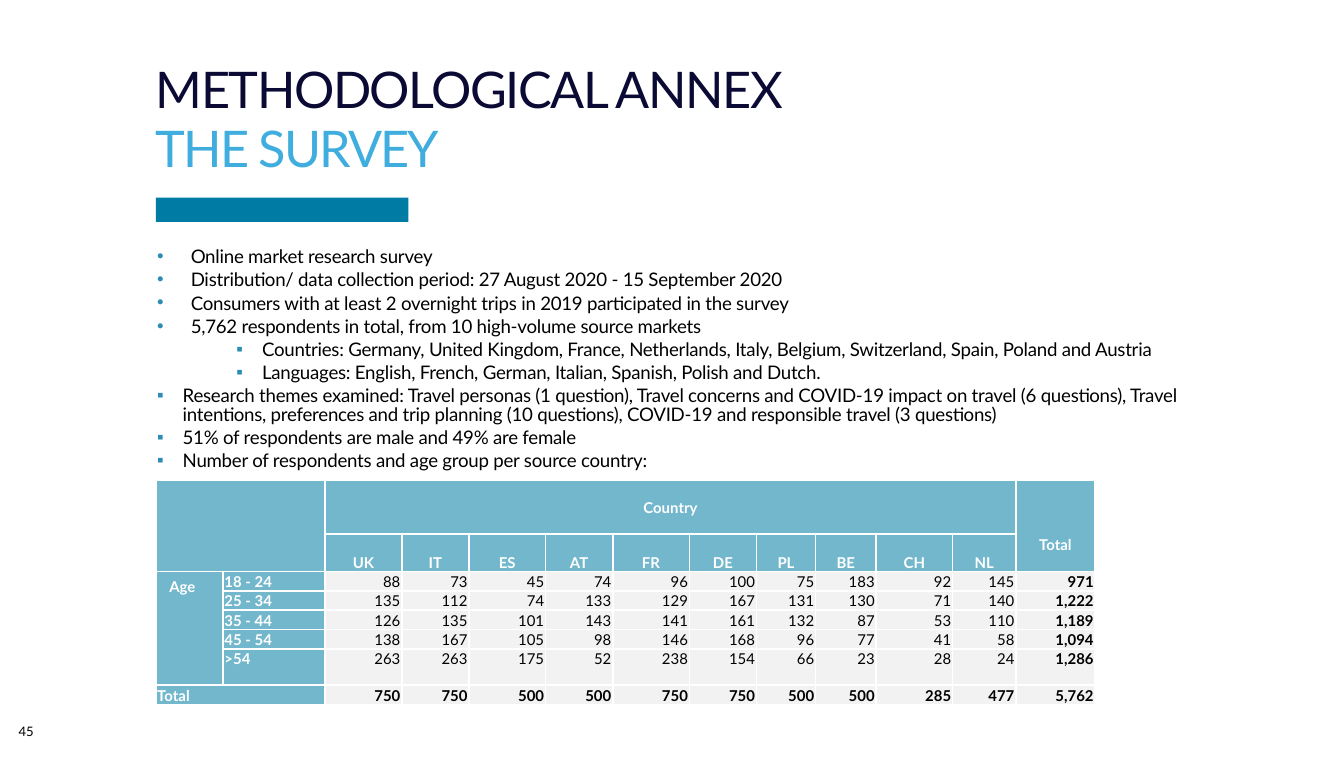
from pptx import Presentation
from pptx.util import Inches, Pt
from pptx.dml.color import RGBColor as RGB
from pptx.enum.shapes import MSO_SHAPE as Shape
from pptx.enum.text import MSO_ANCHOR as Anchor, MSO_AUTO_SIZE as Auto, PP_ALIGN as Align
from pptx.oxml.ns import qn
from lxml.etree import SubElement as Sub

HUE = {"navy": "0A0A35", "sky": "3FADDD", "bar": "007BA3", "dot": "2D8CB5",
       "head": "73B7CC", "pale": "F2F2F2", "white": "FFFFFF", "black": "000000"}
FACE = "Lato"

TITLE = [("METHODOLOGICAL ANNEX", "navy", -80, 1), ("THE SURVEY", "sky", -100, 0)]

ROUND = ("•", 0.26, -0.25, 0)
SUBSET = ("▪", 0.79, -0.19, 1)
SQUARE = ("▪", 0.2, -0.19, 0)
POINTS = [
    (ROUND, "Online market research survey"),
    (ROUND, "Distribution/ data collection period: 27 August 2020 - 15 September 2020"),
    (ROUND, "Consumers with at least 2 overnight trips in 2019 participated in the survey"),
    (ROUND, "5,762 respondents in total, from 10 high-volume source markets"),
    (SUBSET, "Countries: Germany, United Kingdom, France, Netherlands, Italy, Belgium, "
             "Switzerland, Spain, Poland and Austria"),
    (SUBSET, "Languages: English, French, German, Italian, Spanish, Polish and Dutch."),
    (SQUARE, "Research themes examined: Travel personas (1 question), Travel concerns and "
             "COVID-19 impact on travel (6 questions), Travel intentions, preferences and trip "
             "planning (10 questions), COVID-19 and responsible travel (3 questions)"),
    (SQUARE, "51% of respondents are male and 49% are female"),
    (SQUARE, "Number of respondents and age group per source country:"),
]

LANDS = ["UK", "IT", "ES", "AT", "FR", "DE", "PL", "BE", "CH", "NL"]
AGES = [
    ("18 - 24", [88, 73, 45, 74, 96, 100, 75, 183, 92, 145, 971]),
    ("25 - 34", [135, 112, 74, 133, 129, 167, 131, 130, 71, 140, 1222]),
    ("35 - 44", [126, 135, 101, 143, 141, 161, 132, 87, 53, 110, 1189]),
    ("45 - 54", [138, 167, 105, 98, 146, 168, 96, 77, 41, 58, 1094]),
    (">54", [263, 263, 175, 52, 238, 154, 66, 23, 28, 24, 1286]),
]
SUMS = [750, 750, 500, 500, 750, 750, 500, 500, 285, 477, 5762]

GRID = [
    ["", ""] + ["Country"] + [""] * 9 + ["Total"],
    ["", ""] + LANDS + [""],
    *[["" if i else "Age", age] + [f"{n:,}" for n in nums]
      for i, (age, nums) in enumerate(AGES)],
    ["Total", ""] + [f"{n:,}" for n in SUMS],
]
COLS = [0.5, 0.76, 0.57, 0.5, 0.57, 0.5, 0.57, 0.5, 0.44, 0.45, 0.57, 0.47, 0.59]
ROWS = [0.4, 0.28] + [0.14] * 4 + [0.27, 0.14]
SPANS = [(0, 0, 1, 1), (0, 2, 0, 11), (0, 12, 1, 12), (2, 0, 6, 0), (7, 0, 7, 1)]


def say(para, text, size=8, color="black", bold=False, align=Align.LEFT,
        line=None, before=0, track=0):
    para.alignment = align
    para.space_before = Pt(before)
    if line:
        para.line_spacing = Pt(line)
    if not text:
        Sub(para._p, qn("a:endParaRPr"), sz=str(size * 100))
        return
    run = para.add_run()
    run.text = text
    font = run.font
    font.name, font.size, font.bold = FACE, Pt(size), bold
    font.color.rgb = RGB.from_string(HUE[color])
    if track:
        run._r.get_or_add_rPr().set("spc", str(track))


def pad(obj, left, top, right, low):
    obj.margin_left, obj.margin_top = Inches(left), Inches(top)
    obj.margin_right, obj.margin_bottom = Inches(right), Inches(low)


def lines(frame, count):
    return [frame.paragraphs[0]] + [frame.add_paragraph() for _ in range(count - 1)]


def box(slide, x, y, w, h):
    frame = slide.shapes.add_textbox(Inches(x), Inches(y), Inches(w), Inches(h)).text_frame
    frame.word_wrap = True
    pad(frame, 0, 0.03, 0, 0)
    return frame


def dent(para, mark, left, hang, level):
    para.level = level
    props = para._p.get_or_add_pPr()
    props.set("marL", str(Inches(left)))
    props.set("indent", str(Inches(hang)))
    Sub(Sub(props, qn("a:buClr")), qn("a:srgbClr"), val=HUE["dot"])
    Sub(props, qn("a:buFont"), typeface="Arial")
    Sub(props, qn("a:buChar"), char=mark)


def edge(cell):
    props = cell._tc.get_or_add_tcPr()
    for side in ("lnL", "lnR", "lnT", "lnB"):
        line = Sub(props, qn(f"a:{side}"), w=str(Pt(1)))
        Sub(Sub(line, qn("a:solidFill")), qn("a:srgbClr"), val=HUE["white"])


def add_title(slide):
    title = slide.shapes.title
    title.left, title.top = Inches(1.16), Inches(0.42)
    title.width, title.height = Inches(5.93), Inches(0.91)
    frame = title.text_frame
    frame.auto_size, frame.vertical_anchor = Auto.NONE, Anchor.MIDDLE
    pad(frame, 0, 0.01, 0, 0)
    for para, (text, color, track, before) in zip(lines(frame, len(TITLE)), TITLE):
        say(para, text, size=27, color=color, track=track, line=31.8, before=before)


def add_bar(slide):
    bar = slide.shapes.add_shape(Shape.RECTANGLE, Inches(1.16), Inches(1.47),
                                 Inches(1.88), Inches(0.18))
    bar.shadow.inherit = False
    bar.fill.solid()
    bar.fill.fore_color.rgb = RGB.from_string(HUE["bar"])
    bar.line.fill.background()


def add_grid(slide):
    table = slide.shapes.add_table(len(ROWS), len(COLS), Inches(1.16), Inches(3.57),
                                   Inches(sum(COLS)), Inches(sum(ROWS))).table
    table.first_row = table.horz_banding = False
    for col, wide in zip(table.columns, COLS):
        col.width = Inches(wide)
    for row, high in zip(table.rows, ROWS):
        row.height = Inches(high)
    for r, texts in enumerate(GRID):
        for c, text in enumerate(texts):
            cell = table.cell(r, c)
            head = r < 2 or c < 2
            pad(cell, 0.01, 0.01, 0.01, 0)
            edge(cell)
            cell.fill.solid()
            cell.fill.fore_color.rgb = RGB.from_string(HUE["head" if head else "pale"])
            cell.vertical_anchor = Anchor.BOTTOM if r < 2 else Anchor.TOP
            align = Align.CENTER if r < 2 else Align.LEFT if c < 2 else Align.RIGHT
            say(cell.text_frame.paragraphs[0], text, color="white" if head else "black",
                bold=head or r == len(ROWS) - 1 or c == len(COLS) - 1, align=align)
    for top, left, low, right in SPANS:
        table.cell(top, left).merge(table.cell(low, right))
    table.cell(0, 2).vertical_anchor = Anchor.MIDDLE
    pad(table.cell(0, 12), 0.01, 0.01, 0.01, 0.13)
    pad(table.cell(2, 0), 0.1, 0.05, 0.1, 0.05)


def add_points(slide):
    frame = box(slide, 1.16, 1.82, 8.1, 1.66)
    for para, (style, text) in zip(lines(frame, len(POINTS)), POINTS):
        say(para, text, size=10, line=10, before=2.4, track=-10)
        dent(para, *style)


def main():
    deck = Presentation()
    deck.slide_width, deck.slide_height = Inches(10), Inches(5.63)
    slide = deck.slides.add_slide(deck.slide_layouts[5])
    add_title(slide)
    add_bar(slide)
    add_grid(slide)
    say(box(slide, 0.08, 5.23, 0.23, 0.23).paragraphs[0], "45", size=7,
        align=Align.CENTER, line=17, before=2.4)
    add_points(slide)
    deck.save("out.pptx")


if __name__ == "__main__":
    main()
